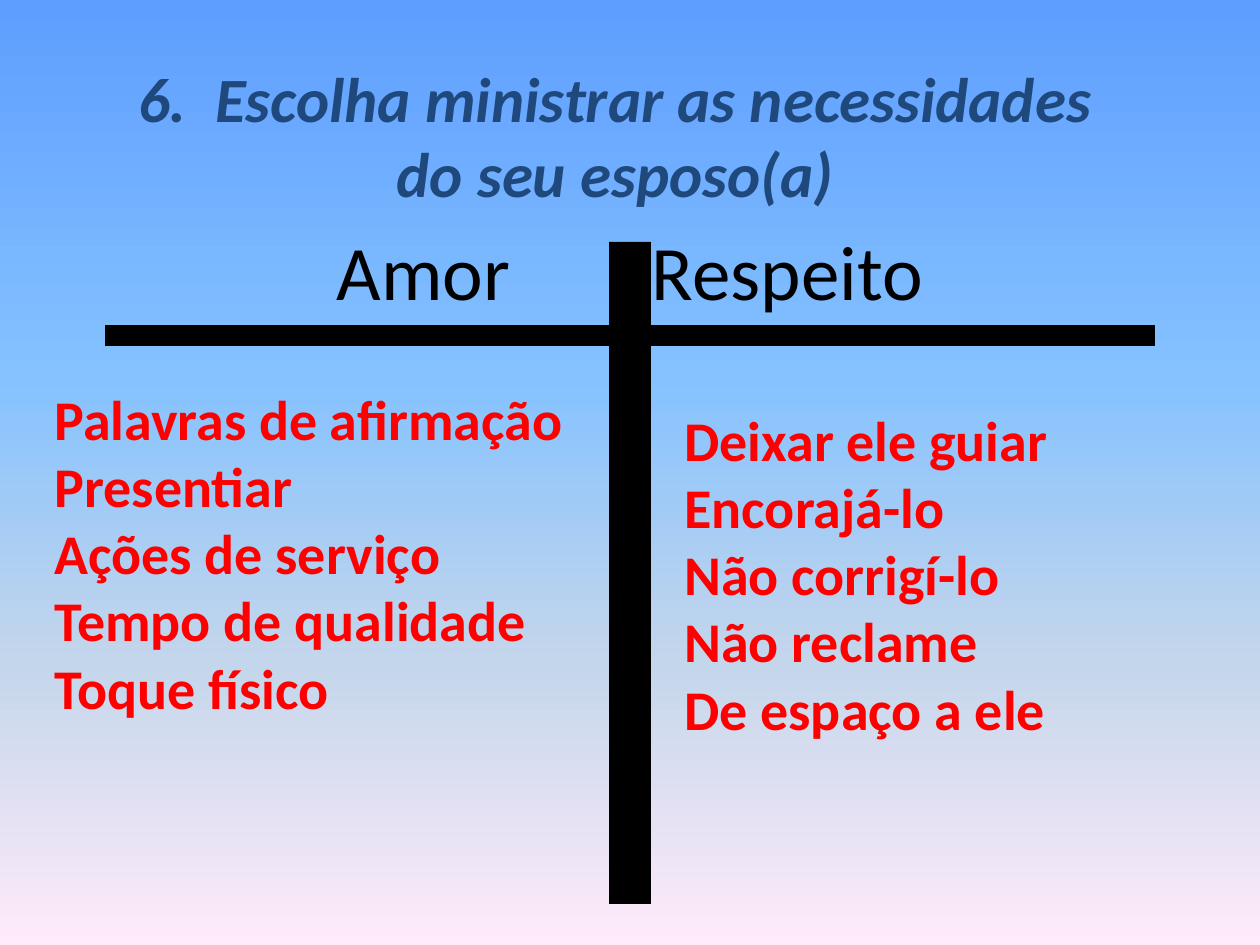
from dataclasses import dataclass
from lxml.etree import SubElement
from pptx import Presentation
from pptx.dml.color import RGBColor
from pptx.enum.shapes import MSO_SHAPE
from pptx.enum.text import MSO_ANCHOR, PP_ALIGN
from pptx.oxml.ns import qn
from pptx.slide import Slide
from pptx.util import Pt

SCALE = 914400 / 126
FONT = "Calibri"
COLORS = {
    "black": "000000",
    "navy": "1F497D",
    "red": "FF0000",
}
SKY = [(0, "5E9EFF"), (40, "85C2FF"), (70, "C4D6EB"), (100, "FFEBFA")]
LOVE = ["Palavras de afirmação", "Presentiar", "Ações de serviço",
        "Tempo de qualidade", "Toque físico"]
RESPECT = ["Deixar ele guiar", "Encorajá-lo", "Não corrigí-lo",
           "Não reclame", "De espaço a ele"]


def emu(*lengths):
    return [round(length * SCALE) for length in lengths]


@dataclass
class Painter:
    page: Slide
    font: str = FONT

    def background(self, stops):
        fill = self.page.background.fill
        fill.gradient()
        fill.gradient_angle = 270
        stop_list = next(self.page.element.iter(qn("a:gsLst")))
        stop_list.clear()
        for percent, color in stops:
            stop = SubElement(stop_list, qn("a:gs"), pos=str(percent * 1000))
            SubElement(stop, qn("a:srgbClr"), val=color)

    def bar(self, left, top, width, height):
        shape = self.page.shapes.add_shape(
            MSO_SHAPE.RECTANGLE, *emu(left, top, width, height))
        shape.shadow.inherit = False
        shape.fill.solid()
        shape.fill.fore_color.rgb = RGBColor.from_string(COLORS["black"])
        shape.line.fill.background()

    def text(self, area, lines, size, color, align=PP_ALIGN.LEFT,
             anchor=MSO_ANCHOR.TOP, bold=False, italic=False):
        box = self.page.shapes.add_textbox(*emu(*area))
        frame = box.text_frame
        frame.word_wrap = True
        frame.vertical_anchor = anchor
        for index, line in enumerate(lines):
            para = frame.add_paragraph() if index else frame.paragraphs[0]
            para.alignment = align
            span = para.add_run()
            span.text = line
            span.font.name = self.font
            span.font.size = Pt(size)
            span.font.bold = bold
            span.font.italic = italic
            span.font.color.rgb = RGBColor.from_string(COLORS[color])


def main():
    deck = Presentation()
    deck.slide_width, deck.slide_height = emu(1260, 945)
    painter = Painter(deck.slides.add_slide(deck.slide_layouts[6]))

    painter.background(SKY)
    painter.text((94, 168, 1072, 203), ["Amor\t\t\tRespeito"], 44, "black",
                 align=PP_ALIGN.CENTER, anchor=MSO_ANCHOR.MIDDLE)
    painter.text((116, 53, 998, 165),
                 ["6.  Escolha ministrar as necessidades do seu esposo(a)"],
                 36, "navy", align=PP_ALIGN.CENTER, bold=True, italic=True)
    painter.bar(105, 325, 1050, 21)
    painter.bar(609, 242, 42, 662)
    for left, top, lines in [(42, 378, LOVE), (672, 399, RESPECT)]:
        painter.text((left, top, 557, 352), lines, 32, "red", bold=True)

    deck.save("out.pptx")


if __name__ == "__main__":
    main()
